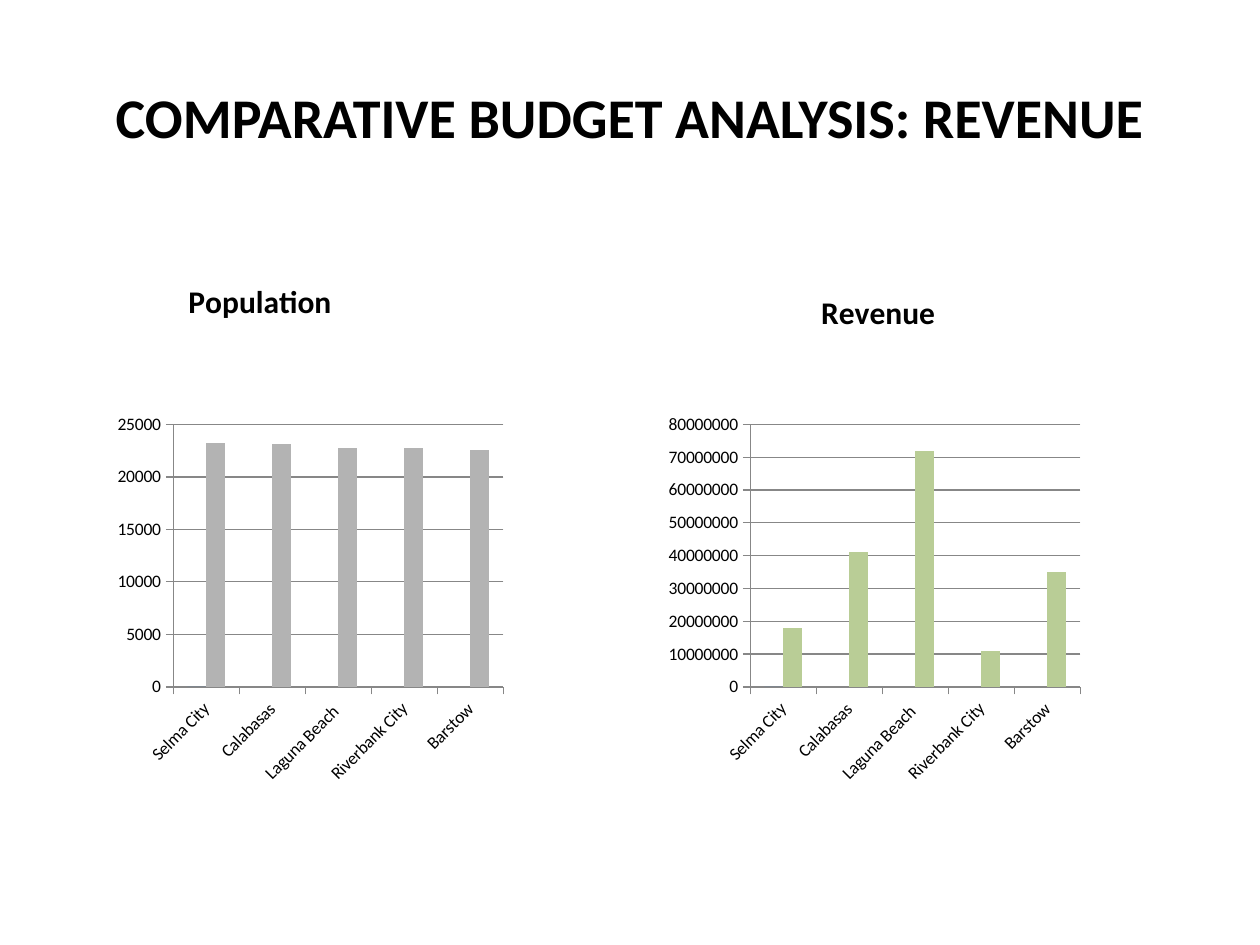
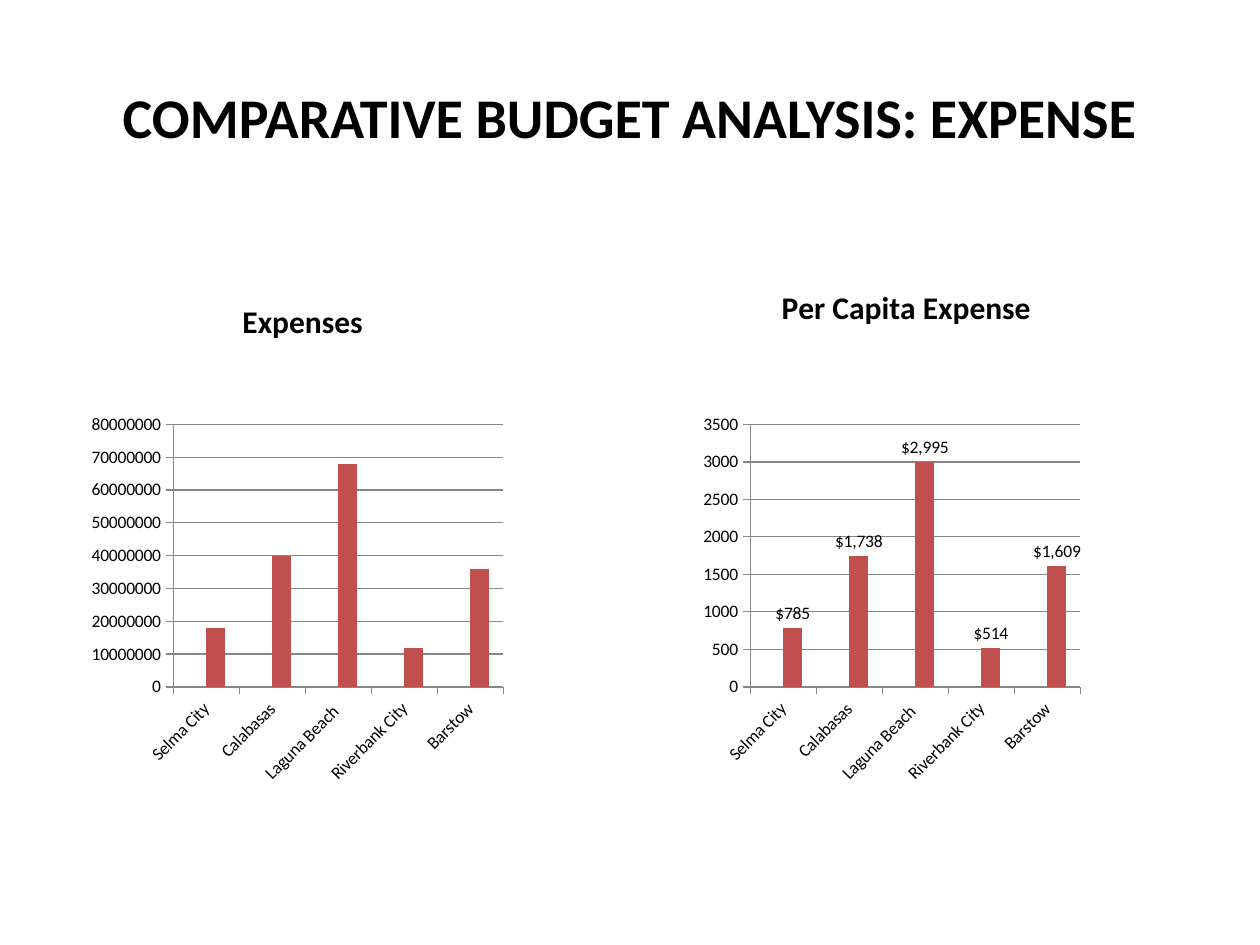
from dataclasses import dataclass
from typing import Any

from lxml import etree
from pptx import Presentation
from pptx.chart.chart import Chart
from pptx.chart.data import CategoryChartData
from pptx.dml.color import RGBColor
from pptx.enum.chart import XL_CHART_TYPE, XL_LABEL_POSITION, XL_TICK_MARK
from pptx.enum.text import MSO_ANCHOR, PP_ALIGN
from pptx.oxml.ns import qn
from pptx.slide import Slide
from pptx.util import Inches, Pt

COLUMNS = XL_CHART_TYPE.COLUMN_CLUSTERED
OUTSIDE_END = XL_LABEL_POSITION.OUTSIDE_END
TICK_OUTSIDE, TICK_NONE = XL_TICK_MARK.OUTSIDE, XL_TICK_MARK.NONE
MIDDLE = MSO_ANCHOR.MIDDLE
CENTER = PP_ALIGN.CENTER

COLORS = {
    "text": "000000",
    "axis": "878787",
    "empty": "4F81BD",
    "population": "B3B3B3",
    "revenue": "B9CD96",
    "expense": "C0504D",
}
FONT = "Calibri"
HEADING_FONT = {"name": FONT, "size": Pt(32), "bold": True}
CHART_TITLE_FONT = {"name": FONT, "size": Pt(18), "bold": True}
CHART_FONT = {"name": FONT, "size": Pt(10), "bold": False}

CITIES = ["Selma City", "Calabasas", "Laguna Beach ", "Riverbank City", "Barstow"]
MILLION = 1_000_000
CHART_LEFTS = (0.5, 5.08)
CHART_TOP, CHART_WIDTH, CHART_HEIGHT = 1.75, 4.42, 4.95
PLOT_LAYOUT = {"layoutTarget": "inner", "xMode": "edge", "yMode": "edge",
               "x": 0.198, "y": 0.327, "w": 0.593, "h": 0.421}


@dataclass(frozen=True)
class CityChart:
    title: str
    title_x: float
    title_y: float
    series_name: str
    values: tuple[int, ...]
    color: str
    axis_max: int
    axis_step: int
    label_format: str = ""


@dataclass(frozen=True)
class BudgetSlide:
    heading: str
    charts: tuple[CityChart, CityChart]


BUDGET_SLIDES = (
    BudgetSlide("COMPARATIVE BUDGET ANALYSIS: REVENUE", (
        CityChart("Population", 0.215, 0.086, "Population",
                  (23200, 23100, 22700, 22700, 22600), "population", 25000, 5000),
        CityChart("Revenue", 0.315, 0.103, "Revenue",
                  tuple(m * MILLION for m in (18, 41, 72, 11, 35)),
                  "revenue", 80 * MILLION, 10 * MILLION),
    )),
    BudgetSlide("COMPARATIVE BUDGET ANALYSIS: EXPENSE", (
        CityChart("Expenses", 0.312, 0.118, "Expenses",
                  tuple(m * MILLION for m in (18, 40, 68, 12, 36)),
                  "expense", 80 * MILLION, 10 * MILLION),
        CityChart("Per Capita Expense", 0.244, 0.095, "Series 2",
                  (785, 1738, 2995, 514, 1609), "expense", 3500, 500, '"$"#,##0'),
    )),
)


def rgb(color: str) -> RGBColor:
    return RGBColor.from_string(COLORS[color])


def apply_format(target: Any, values: dict[str, Any]) -> None:
    for name, value in values.items():
        setattr(target, name, value)


def style_font(font: Any, values: dict[str, Any]) -> None:
    apply_format(font, values)
    font.color.rgb = rgb("text")


def set_manual_layout(parent: Any, values: dict[str, Any], index: int) -> None:
    """Place a chart part by fractions of the chart's size."""
    layout = parent.find(qn("c:layout"))
    if layout is None:
        layout = etree.Element(qn("c:layout"))
        parent.insert(index, layout)
    manual = etree.SubElement(layout, qn("c:manualLayout"))
    for name, value in values.items():
        etree.SubElement(manual, qn(f"c:{name}")).set("val", str(value))


def add_heading(slide: Slide, heading: str) -> None:
    box = slide.shapes.add_textbox(Inches(0.5), Inches(0.3), Inches(9), Inches(1.25))
    frame = box.text_frame
    apply_format(frame, {"word_wrap": True, "vertical_anchor": MIDDLE})
    paragraph = frame.paragraphs[0]
    paragraph.alignment = CENTER
    run = paragraph.add_run()
    run.text = heading
    style_font(run.font, HEADING_FONT)


def style_axes(chart: Chart, city_chart: CityChart) -> None:
    city_axis, value_axis = chart.category_axis, chart.value_axis
    apply_format(value_axis, {
        "minimum_scale": 0,
        "maximum_scale": city_chart.axis_max,
        "major_unit": city_chart.axis_step,
        "has_major_gridlines": True,
    })
    for axis in (city_axis, value_axis):
        apply_format(axis, {"major_tick_mark": TICK_OUTSIDE, "minor_tick_mark": TICK_NONE})
        apply_format(axis.tick_labels,
                     {"number_format": "General", "number_format_is_linked": False})
        style_font(axis.tick_labels.font, CHART_FONT)
    for line in (city_axis.format.line, value_axis.format.line,
                 value_axis.major_gridlines.format.line):
        line.width = Pt(0.75)
        line.color.rgb = rgb("axis")
    city_text = city_axis._element.find(qn("c:txPr"))
    city_text.find(qn("a:bodyPr")).set("rot", str(-45 * 60000))


def add_chart_title(chart: Chart, city_chart: CityChart) -> None:
    chart.has_title = True
    title = chart.chart_title
    run = title.text_frame.paragraphs[0].add_run()
    run.text = city_chart.title
    style_font(run.font, CHART_TITLE_FONT)
    element = title._element
    set_manual_layout(element, {"xMode": "edge", "yMode": "edge",
                                "x": city_chart.title_x, "y": city_chart.title_y}, 1)
    overlay = element.find(qn("c:overlay"))
    if overlay is None:
        overlay = etree.Element(qn("c:overlay"))
        element.find(qn("c:layout")).addnext(overlay)
    overlay.set("val", "1")


def add_city_chart(slide: Slide, city_chart: CityChart, left: float) -> None:
    data = CategoryChartData()
    data.categories = CITIES
    data.add_series("Series 1", (0,))
    data.add_series(city_chart.series_name, city_chart.values)
    chart = slide.shapes.add_chart(
        COLUMNS, Inches(left), Inches(CHART_TOP),
        Inches(CHART_WIDTH), Inches(CHART_HEIGHT), data).chart
    chart.has_legend = False
    style_font(chart.font, CHART_FONT)
    add_chart_title(chart, city_chart)
    style_axes(chart, city_chart)

    plot = chart.plots[0]
    apply_format(plot, {"gap_width": 150, "overlap": 0, "vary_by_categories": False})
    for series, color in zip(plot.series, ("empty", city_chart.color)):
        series.format.fill.solid()
        series.format.fill.fore_color.rgb = rgb(color)
    if city_chart.label_format:
        labels = plot.series[1].data_labels
        apply_format(labels, {
            "show_value": True,
            "position": OUTSIDE_END,
            "number_format": city_chart.label_format,
            "number_format_is_linked": False,
        })
        style_font(labels.font, CHART_FONT)
    plot_area = chart._chartSpace.find(f"{qn('c:chart')}/{qn('c:plotArea')}")
    set_manual_layout(plot_area, PLOT_LAYOUT, 0)


def main() -> None:
    presentation = Presentation()
    apply_format(presentation, {"slide_width": Inches(10), "slide_height": Inches(7.5)})
    blank = presentation.slide_layouts[6]
    for budget_slide in BUDGET_SLIDES:
        slide = presentation.slides.add_slide(blank)
        add_heading(slide, budget_slide.heading)
        for city_chart, left in zip(budget_slide.charts, CHART_LEFTS):
            add_city_chart(slide, city_chart, left)
    presentation.save("out.pptx")


if __name__ == "__main__":
    main()
